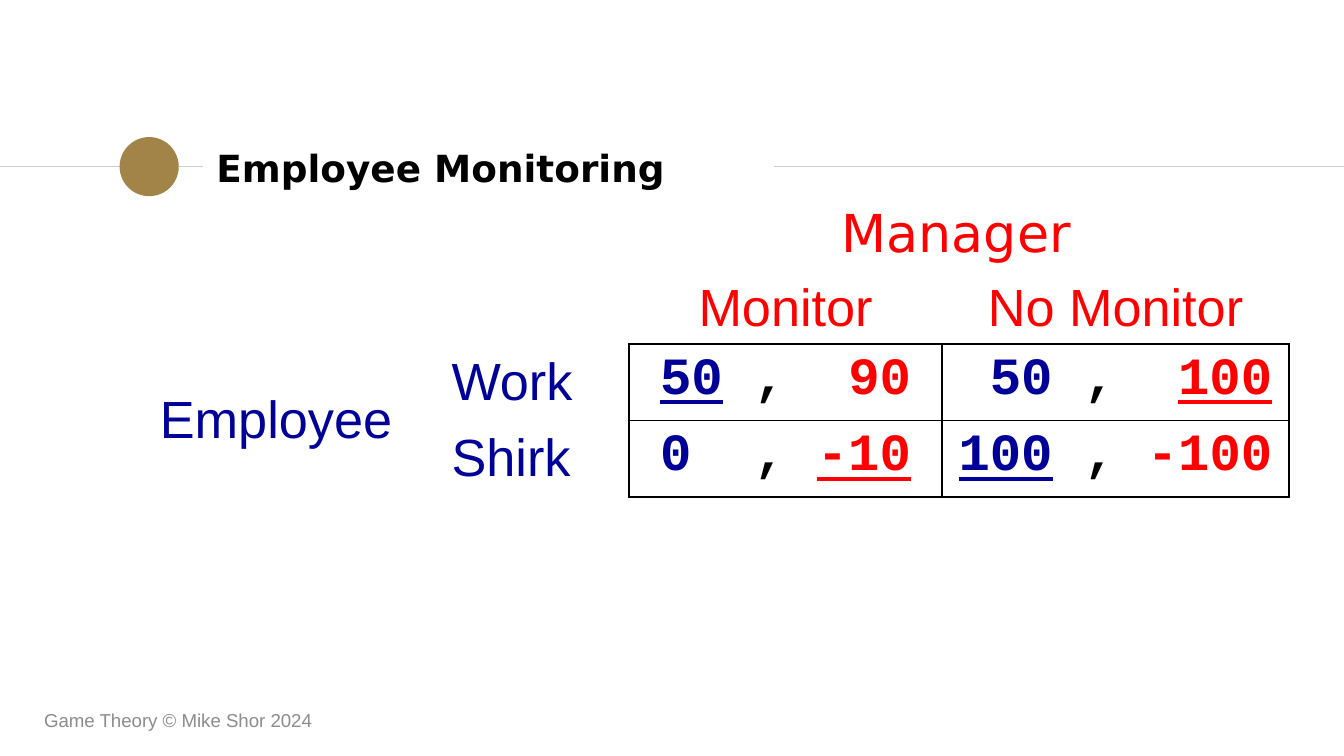
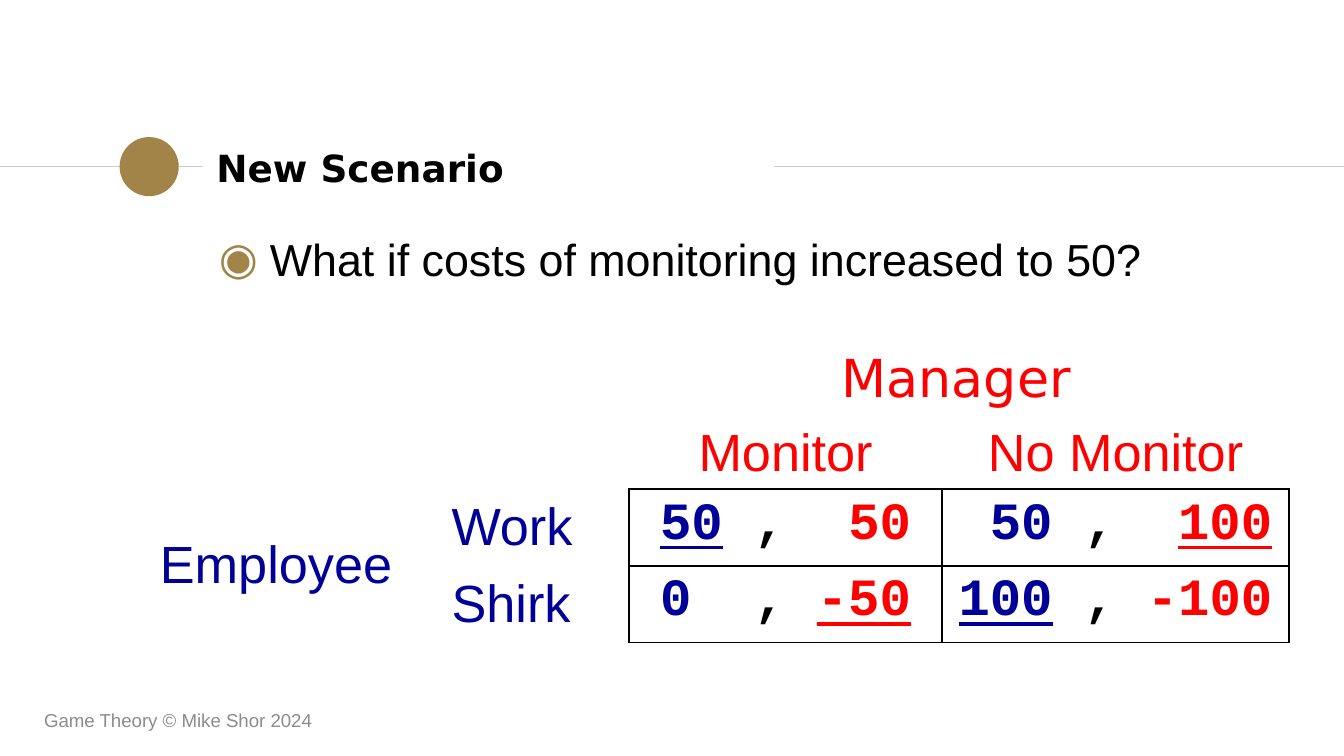
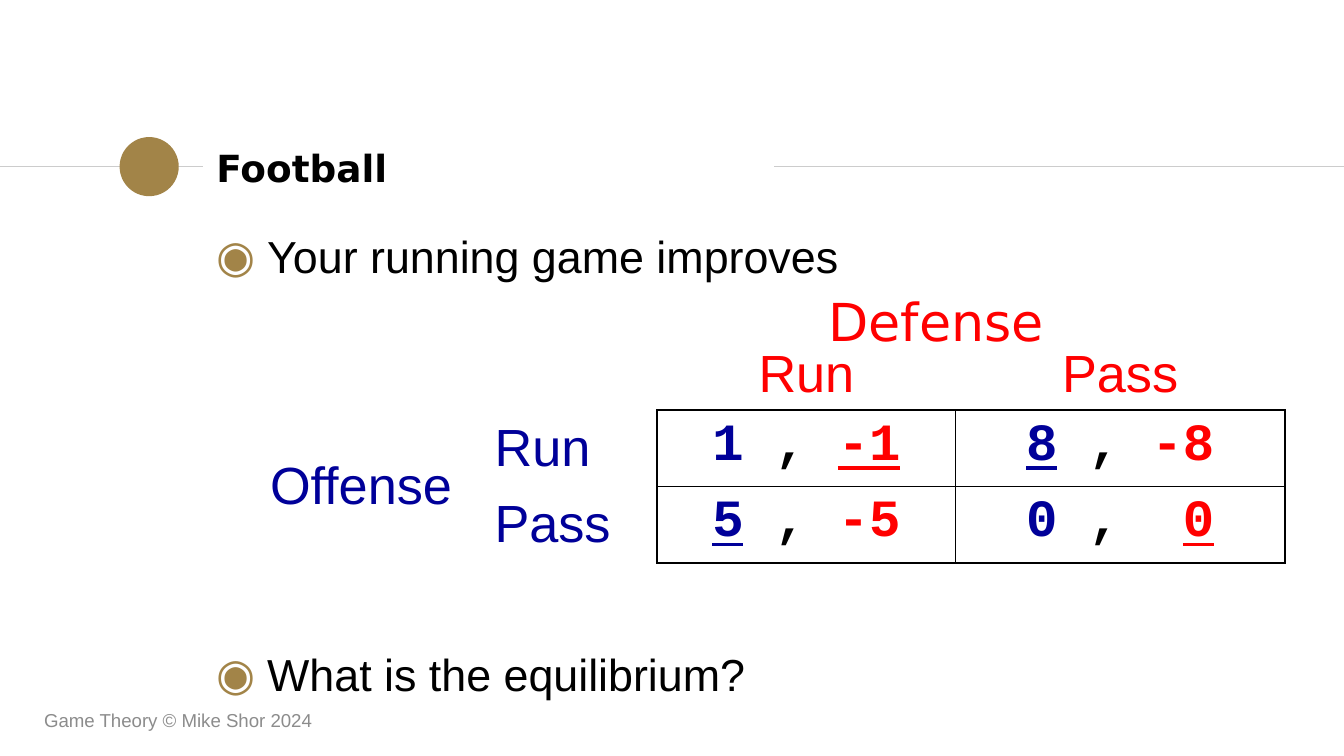
from lxml.etree import SubElement
from pptx import Presentation
from pptx.dml.color import RGBColor
from pptx.enum.shapes import MSO_CONNECTOR, MSO_SHAPE
from pptx.enum.text import MSO_ANCHOR, MSO_AUTO_SIZE, PP_ALIGN
from pptx.oxml.ns import qn
from pptx.util import Inches, Pt

COLORS = {
    "black": "000000",
    "rule": "CCCCCC",
    "gold": "A28448",
    "footer": "8C8C8C",
    "row": "000099",
    "column": "FF0000",
}
HEADING_FONT, BODY_FONT, PAYOFF_FONT = "DejaVu Sans", "Arial", "Courier New"
FOOTER = "Game Theory © Mike Shor 2024"
RULES = [(0, 1.51), (5.76, 10)]
RULE_TOP = 1.24
GAME_SIZE = 28
CHARACTER = GAME_SIZE * 0.6 / 72
ROW_HEIGHT = 0.57
SIDES = ("L", "R", "T", "B")

MONITORING = {
    "players": ("Employee", "Manager"),
    "rows": ["Work", "Shirk"],
    "columns": ["Monitor", "No Monitor"],
    "widths": [2.17, 1.42, 2.33, 2.58],
    "right_aligned": (False, True),
    "player_indent": 0.1,
}
SLIDES = [
    {
        "title": "Employee Monitoring",
        "game": MONITORING | {"payoffs": [[(50, 90), (50, 100)], [(0, -10), (100, -100)]]},
        "table_at": (1.09, 1.99),
        "player_at": (5.75, 1.44),
    },
    {
        "title": "New Scenario",
        "game": MONITORING | {"payoffs": [[(50, 50), (50, 100)], [(0, -50), (100, -100)]]},
        "table_at": (1.09, 3.07),
        "player_at": (5.75, 2.52),
        "bullets": [("What if costs of monitoring increased to 50?", 6)],
        "bullets_at": (1.53, 1.67),
    },
    {
        "title": "Football",
        "game": {
            "players": ("Offense", "Defense"),
            "rows": ["Run", "Pass"],
            "columns": ["Run", "Pass"],
            "widths": [2.1, 1.31, 2.22, 2.45],
            "right_aligned": (False, False),
            "player_indent": 0.53,
            "payoffs": [[(1, -1), (8, -8)], [(5, -5), (0, 0)]],
        },
        "table_at": (1.48, 2.48),
        "player_at": (5.6, 2.1),
        "bullets": [("Your running game improves", 6), ("What is the equilibrium?", 198)],
        "bullets_at": (1.51, 1.65),
    },
]


def rgb(name):
    return RGBColor.from_string(COLORS[name])


def write_text(paragraph, text, font=BODY_FONT, size=GAME_SIZE, color="black",
               bold=False, underline=False, align=None):
    if align is not None:
        paragraph.alignment = align
    run = paragraph.add_run()
    run.text = text
    run.font.name = font
    run.font.size = Pt(size)
    run.font.color.rgb = rgb(color)
    run.font.bold = bold
    run.font.underline = underline


def set_percent_before(paragraph, percent):
    properties = paragraph._p.get_or_add_pPr()
    spacing = SubElement(properties, qn("a:spcBef"))
    SubElement(spacing, qn("a:spcPct"), val=str(percent * 1000))


def set_tabs(paragraph, stops):
    tabs = SubElement(paragraph._p.get_or_add_pPr(), qn("a:tabLst"))
    for position, align in stops:
        SubElement(tabs, qn("a:tab"), pos=str(Inches(position)), algn=align)


def set_bullet(paragraph):
    properties = paragraph._p.get_or_add_pPr()
    properties.set("marL", str(Inches(0.38)))
    properties.set("indent", str(-Inches(0.38)))
    color = SubElement(properties, qn("a:buClr"))
    SubElement(color, qn("a:srgbClr"), val=COLORS["gold"])
    SubElement(properties, qn("a:buFont"), typeface=BODY_FONT)
    SubElement(properties, qn("a:buChar"), char="◉")


def set_borders(cell, visible):
    properties = cell._tc.get_or_add_tcPr()
    for side in SIDES:
        line = SubElement(properties, qn(f"a:ln{side}"), w=str(Pt(1)))
        if side in visible:
            fill = SubElement(line, qn("a:solidFill"))
            SubElement(fill, qn("a:srgbClr"), val=COLORS["black"])
        else:
            SubElement(line, qn("a:noFill"))
    cell.fill.background()


def set_margins(frame, margin):
    frame.margin_left = frame.margin_right = Inches(margin)
    frame.margin_top = frame.margin_bottom = Inches(margin)


def add_text_box(slide, left, top, width, height):
    frame = slide.shapes.add_textbox(*map(Inches, (left, top, width, height))).text_frame
    frame.word_wrap = True
    return frame


def decorate_layout(slide, layout):
    parts = []
    for start, end in RULES:
        rule = slide.shapes.add_connector(
            MSO_CONNECTOR.STRAIGHT, Inches(start), Inches(RULE_TOP), Inches(end), Inches(RULE_TOP))
        rule.line.color.rgb = rgb("rule")
        rule.line.width = Pt(0.75)
        SubElement(rule._element.spPr, qn("a:effectLst"))
        parts.append(rule)
    dot = slide.shapes.add_shape(
        MSO_SHAPE.OVAL, Inches(0.89), Inches(1.02), Inches(0.44), Inches(0.44))
    dot.shadow.inherit = False
    dot.fill.solid()
    dot.fill.fore_color.rgb = rgb("gold")
    dot.line.fill.background()
    parts.append(dot)
    for part in parts:
        layout.shapes.element.append(part.element)


def add_title(slide, text):
    title = slide.shapes.title
    title.left, title.top, title.width, title.height = map(Inches, (1.51, 1.01, 4.24, 0.48))
    frame = title.text_frame
    set_margins(frame, 0.1)
    frame.vertical_anchor = MSO_ANCHOR.MIDDLE
    frame.auto_size = MSO_AUTO_SIZE.NONE
    write_text(frame.paragraphs[0], text, font=HEADING_FONT, size=20, bold=True,
               align=PP_ALIGN.LEFT)


def add_footer(slide):
    frame = add_text_box(slide, 0.23, 5.21, 3.38, 0.3)
    frame.vertical_anchor = MSO_ANCHOR.MIDDLE
    write_text(frame.paragraphs[0], FOOTER, size=10, color="footer")


def add_column_player(slide, name, left, top):
    frame = add_text_box(slide, left, top, 2.73, ROW_HEIGHT)
    frame.auto_size = MSO_AUTO_SIZE.SHAPE_TO_FIT_TEXT
    set_percent_before(frame.paragraphs[0], 50)
    write_text(frame.paragraphs[0], name, font=HEADING_FONT, color="column",
               align=PP_ALIGN.CENTER)


def add_bullets(slide, bullets, left, top):
    frame = add_text_box(slide, left, top, 7.45, 3.4)
    set_margins(frame, 0.1)
    for index, (text, space_before) in enumerate(bullets):
        paragraph = frame.add_paragraph() if index else frame.paragraphs[0]
        paragraph.line_spacing = 0.9
        paragraph.space_before = Pt(space_before)
        set_bullet(paragraph)
        write_text(paragraph, text, size=24)


def fill_label(cell, text, color, borders="", anchor=MSO_ANCHOR.MIDDLE, align=PP_ALIGN.LEFT):
    set_borders(cell, borders)
    cell.vertical_anchor = anchor
    paragraph = cell.text_frame.paragraphs[0]
    set_percent_before(paragraph, 20)
    write_text(paragraph, text, color=color, align=align)


def fill_payoffs(cell, pair, best, widths, column_width, right_aligned):
    first, second = map(str, pair)
    total = sum(widths) + 3
    shift = widths[0] - len(first) if right_aligned else 0
    set_borders(cell, SIDES)
    cell.margin_left = Inches((column_width - total * CHARACTER) / 2 + shift * CHARACTER)
    cell.margin_right = 0
    paragraph = cell.text_frame.paragraphs[0]
    set_percent_before(paragraph, 20)
    set_tabs(paragraph, [((widths[0] + 1 - shift) * CHARACTER, "l"),
                         ((total - shift) * CHARACTER, "r")])
    pieces = [(first, "row", best[0]), ("\t,\t", "black", False), (second, "column", best[1])]
    for text, color, underline in pieces:
        write_text(paragraph, text, font=PAYOFF_FONT, color=color, bold=True,
                   underline=underline, align=PP_ALIGN.LEFT)


def add_game(slide, game, left, top):
    widths, payoffs = game["widths"], game["payoffs"]
    table = slide.shapes.add_table(
        3, 4, Inches(left), Inches(top), Inches(sum(widths)), Inches(3 * ROW_HEIGHT)).table
    table.first_row = table.horz_banding = False
    for column, width in zip(table.columns, widths):
        column.width = Inches(width)
    for row in table.rows:
        row.height = Inches(ROW_HEIGHT)

    for row, column in [(0, 0), (0, 1), (2, 0)]:
        set_borders(table.cell(row, column), "")
    player = table.cell(1, 0)
    player.merge(table.cell(2, 0))
    fill_label(player, game["players"][0], "row")
    player.margin_left = Inches(game["player_indent"])
    for index, name in enumerate(game["rows"], 1):
        fill_label(table.cell(index, 1), name, "row", borders="R")
    for index, name in enumerate(game["columns"], 2):
        fill_label(table.cell(0, index), name, "column", borders="B",
                   anchor=MSO_ANCHOR.BOTTOM, align=PP_ALIGN.CENTER)

    for column, pairs in enumerate(zip(*payoffs)):
        digits = [max(len(str(value)) for value in values) for values in zip(*pairs)]
        best_first = max(first for first, _ in pairs)
        for row, pair in enumerate(pairs):
            best_second = max(second for _, second in payoffs[row])
            best = (pair[0] == best_first, pair[1] == best_second)
            fill_payoffs(table.cell(row + 1, column + 2), pair, best, digits,
                         widths[column + 2], game["right_aligned"][column])


def main():
    presentation = Presentation()
    presentation.slide_width = Inches(10)
    presentation.slide_height = Inches(10 * 9 / 16)
    layout = presentation.slide_layouts[5]
    for index, content in enumerate(SLIDES):
        slide = presentation.slides.add_slide(layout)
        if index == 0:
            decorate_layout(slide, layout)
        add_title(slide, content["title"])
        add_footer(slide)
        add_column_player(slide, content["game"]["players"][1], *content["player_at"])
        add_game(slide, content["game"], *content["table_at"])
        if "bullets" in content:
            add_bullets(slide, content["bullets"], *content["bullets_at"])
    presentation.save("out.pptx")


if __name__ == "__main__":
    main()
